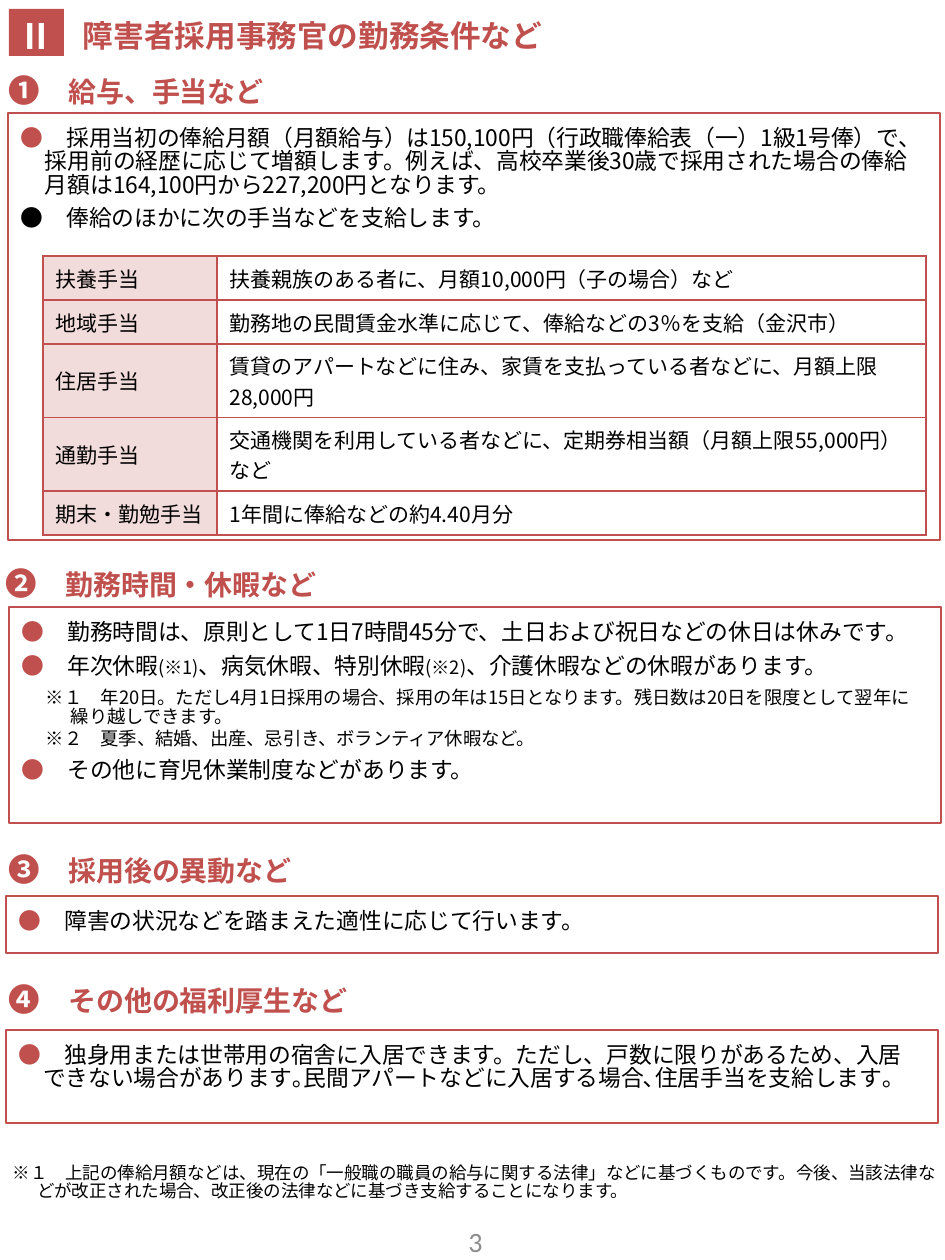
from lxml.etree import SubElement
from pptx import Presentation
from pptx.dml.color import RGBColor
from pptx.enum.shapes import MSO_SHAPE as Shape
from pptx.enum.text import MSO_ANCHOR as Anchor, MSO_AUTO_SIZE as Auto, PP_ALIGN as Align
from pptx.oxml.ns import qn
from pptx.util import Pt

RED = RGBColor(0xC0, 0x50, 0x4D)
PINK = RGBColor(0xF2, 0xDC, 0xDB)
BLACK = RGBColor(0, 0, 0)
WHITE = RGBColor(255, 255, 255)
GREY = RGBColor(0x8C, 0x8C, 0x8C)
FONT = "Noto Sans CJK JP"
SCALE = 914400 / 126


def px(n):
    return round(n * SCALE)


def write(para, text, size=13, color=BLACK, bold=False, font=FONT):
    """Append one formatted run to a paragraph."""
    run = para.add_run()
    run.text = text
    face = run.font
    face.name, face.size, face.bold = font, Pt(size), bold
    face.color.rgb = color
    props = run._r.get_or_add_rPr()
    props.set("lang", "ja-JP")
    SubElement(props, qn("a:ea")).set("typeface", font)


def shape_par(para, left=0, hang=0, before=0, space=1.0, align=Align.LEFT):
    para.alignment = align
    para.space_before, para.line_spacing = Pt(before), space
    props = para._p.get_or_add_pPr()
    props.set("marL", str(px(left)))
    props.set("indent", str(-px(hang)))
    SubElement(props, qn("a:buNone"))


class Page:
    def __init__(self, deck):
        self.slide = deck.slides.add_slide(deck.slide_layouts[4])
        self.bodies = iter(list(self.slide.placeholders)[1:])

    def frame(self, item, inset=(0, 0, 0, 0), anchor=Anchor.MIDDLE):
        frame = item.text_frame
        frame.word_wrap, frame.auto_size = True, Auto.NONE
        frame.vertical_anchor = anchor
        (frame.margin_left, frame.margin_top,
         frame.margin_right, frame.margin_bottom) = map(px, inset)
        return frame

    def place(self, item, at):
        item.left, item.top, item.width, item.height = map(px, at)

    def title(self, at, text):
        item = self.slide.shapes.title
        self.place(item, at)
        para = self.frame(item).paragraphs[0]
        shape_par(para)
        write(para, text, 17.5, RED, True)

    def badge(self, at, text):
        item = self.slide.shapes.add_shape(Shape.RECTANGLE, *map(px, at))
        item.shadow.inherit = False
        item.fill.solid()
        item.fill.fore_color.rgb = RED
        item.line.fill.background()
        para = self.frame(item, (0, 6, 0, 0)).paragraphs[0]
        shape_par(para, align=Align.CENTER)
        write(para, text, 20, WHITE, True)

    def text(self, at, *runs, inset=(0, 0, 0, 0), **form):
        """Add a one-paragraph text box; each run is (text, format)."""
        item = self.slide.shapes.add_textbox(*map(px, at))
        para = self.frame(item, inset).paragraphs[0]
        shape_par(para, **form)
        for words, look in runs:
            write(para, words, **look)

    def head(self, at, mark, text):
        look = dict(color=RED, bold=True)
        self.text(at, (mark, dict(look, size=18)), ("　" + text, dict(look, size=16)))

    def box(self, at, *items):
        """Fill a framed list; each item is (kind, runs), small runs in brackets."""
        item = next(self.bodies)
        self.place(item, at)
        item.line.color.rgb, item.line.width = RED, Pt(1.5)
        frame = self.frame(item, (0, 15, 15, 0), Anchor.TOP)
        for i, (kind, *runs) in enumerate(items):
            para = frame.add_paragraph() if i else frame.paragraphs[0]
            note = kind.startswith("note")
            left, hang = (62, 25) if note else (37, 24)
            before = 0 if i == 0 else 2 if kind == "note next" else 6
            shape_par(para, left, hang, before, 0.85)
            if not note:
                write(para, "●", color=BLACK if kind == "black" else RED)
                runs[0] = "　" + runs[0]
            for run in runs:
                write(para, run, 10.5 if note or run.startswith("(") else 13)

    def table(self, at, cols, rows):
        item = self.slide.shapes.add_table(len(rows), len(cols), *map(px, at))
        grid = item.table
        grid.first_row = grid.horz_banding = False
        for col, width in zip(grid.columns, cols):
            col.width = px(width)
        for r, row in enumerate(rows):
            for c, text in enumerate(row):
                self.cell(grid.cell(r, c), text, WHITE if c else PINK)

    def cell(self, cell, text, fill):
        cell.vertical_anchor = Anchor.MIDDLE
        write(cell.text_frame.paragraphs[0], text, 12)
        props = cell._tc.get_or_add_tcPr()
        for side in "LRTB":
            line = SubElement(props, qn("a:ln" + side), w=str(Pt(1)))
            solid = SubElement(line, qn("a:solidFill"))
            SubElement(solid, qn("a:srgbClr"), val=str(RED))
        cell.fill.solid()
        cell.fill.fore_color.rgb = fill


def main():
    deck = Presentation()
    deck.slide_width, deck.slide_height = px(945), px(1260)
    page = Page(deck)

    page.badge((9, 9, 55, 47), "Ⅱ")
    page.title((83, 19, 519, 32), "障害者採用事務官の勤務条件など")

    page.head((9, 64, 856, 52), "➊", "給与、手当など")
    page.box(
        (8, 113, 932, 427),
        ("red", "採用当初の俸給月額（月額給与）は150,100円（行政職俸給表（一）1級1号俸）で、"
         "採用前の経歴に応じて増額します。例えば、高校卒業後30歳で採用された場合の"
         "俸給月額は164,100円から227,200円となります。"),
        ("black", "俸給のほかに次の手当などを支給します。"))
    page.table((43, 256, 883, 220), (174, 709), (
        ("扶養手当", "扶養親族のある者に、月額10,000円（子の場合）など"),
        ("地域手当", "勤務地の民間賃金水準に応じて、俸給などの3％を支給（金沢市）"),
        ("住居手当", "賃貸のアパートなどに住み、家賃を支払っている者などに、月額上限28,000円"),
        ("通勤手当", "交通機関を利用している者などに、定期券相当額（月額上限55,000円）など"),
        ("期末・勤勉手当", "1年間に俸給などの約4.40月分")))

    page.head((6, 557, 932, 52), "➋", "勤務時間・休暇など")
    page.box(
        (9, 607, 932, 216),
        ("red", "勤務時間は、原則として1日7時間45分で、土日および祝日などの休日は休みです。"),
        ("red", "年次休暇", "(※1)", "、病気休暇、特別休暇", "(※2)", "、介護休暇などの休暇があります。"),
        ("note", "※１　年20日。ただし4月1日採用の場合、採用の年は15日となります。"
         "残日数は20日を限度として翌年に繰り越しできます。"),
        ("note next", "※２　夏季、結婚、出産、忌引き、ボランティア休暇など。"),
        ("red", "その他に育児休業制度などがあります。"))

    page.head((9, 843, 930, 52), "➌", "採用後の異動など")
    page.box((6, 896, 932, 57),
             ("red", "障害の状況などを踏まえた適性に応じて行います。"))

    page.head((9, 973, 930, 52), "➍", "その他の福利厚生など")
    page.box(
        (6, 1030, 932, 93),
        ("red", "独身用または世帯用の宿舎に入居できます。ただし、戸数に限りがあるため、"
         "入居できない場合があります｡民間アパートなどに入居する場合､住居手当を支給します｡"))

    page.text(
        (13, 1143, 927, 81),
        ("※１　上記の俸給月額などは、現在の「一般職の職員の給与に関する法律」などに基づくものです。"
         "今後、当該法律などが改正された場合、改正後の法律などに基づき支給することになります。",
         dict(size=10)),
        left=24, hang=24, space=0.85)
    page.text((365, 1223, 221, 37), ("3", dict(size=16, color=GREY, font="Calibri")),
              inset=(13, 6, 13, 6), align=Align.CENTER)
    deck.save("out.pptx")


if __name__ == "__main__":
    main()
